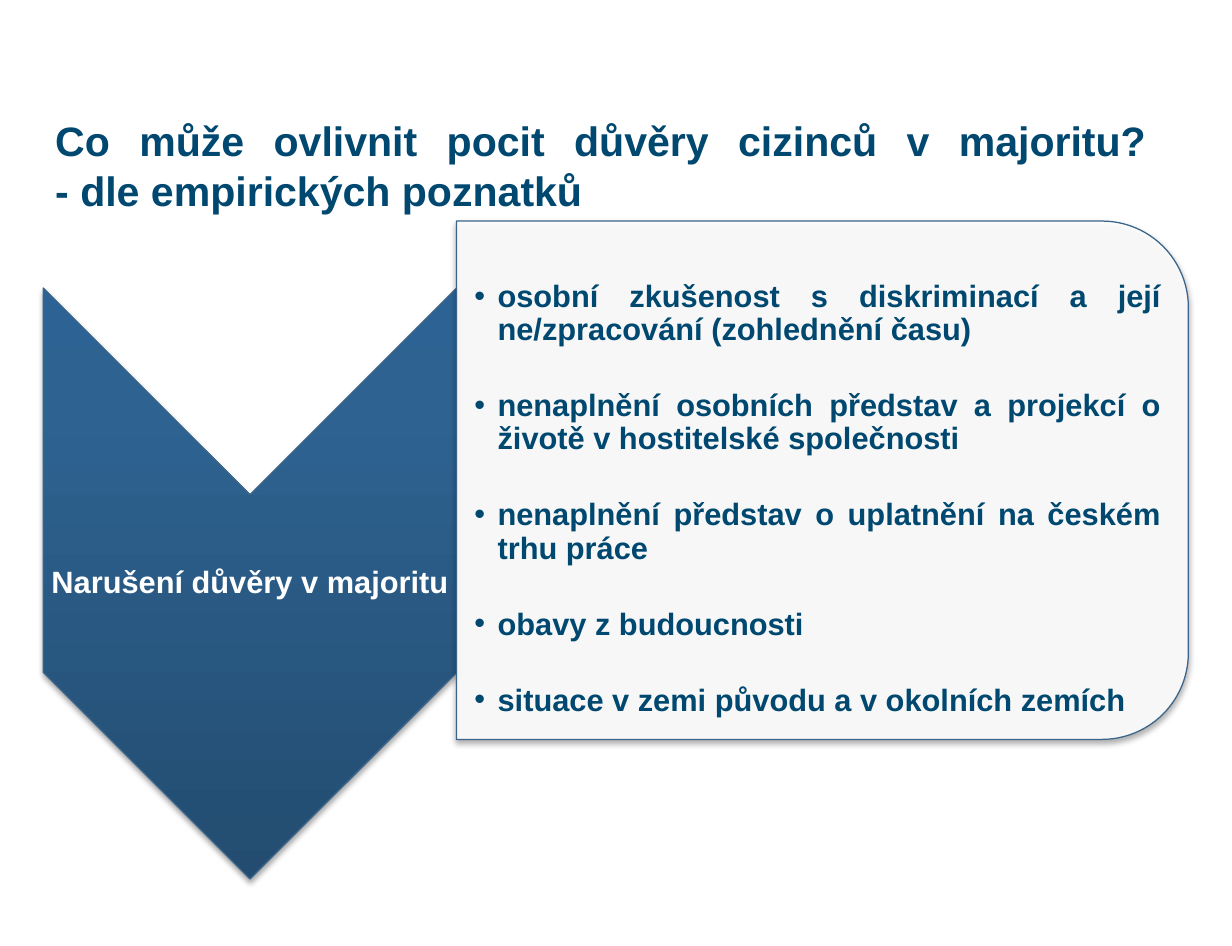
"""Build a slide on what weakens foreigners' trust in the majority society."""
from dataclasses import dataclass

from lxml.etree import SubElement
from pptx import Presentation
from pptx.dml.color import RGBColor
from pptx.enum.shapes import MSO_SHAPE as Geom
from pptx.enum.text import MSO_ANCHOR as Anchor, PP_ALIGN as Align
from pptx.oxml import parse_xml
from pptx.oxml.ns import nsdecls, qn
from pptx.util import Cm, Pt

NAVY, WHITE, EDGE = "004870", "FFFFFF", "3B658A"
STOPS = ((0, "234C70"), (80, "2E6391"), (100, "2C6394"))
ITEMS = (
    "osobní zkušenost s diskriminací a její ne/zpracování (zohlednění času)",
    "nenaplnění osobních představ a projekcí o životě v hostitelské společnosti",
    "nenaplnění představ o uplatnění na českém trhu práce",
    "obavy z budoucnosti",
    "situace v zemi původu a v okolních zemích",
)


@dataclass
class Box:
    left: float
    top: float
    width: float
    height: float

    def sides(self) -> list:
        return [Cm(v) for v in (self.left, self.top, self.width, self.height)]


@dataclass
class Words:
    box: Box
    lines: tuple
    size: int
    color: str
    align: Align
    anchor: Anchor
    inset: tuple
    spacing: float = 1.0
    gap: float = 0
    bullet: bool = False


def paint(target, color: str) -> None:
    target.rgb = RGBColor.from_string(color)


def add_turned(slide, kind: Geom, box: Box):
    shape = slide.shapes.add_shape(kind, *box.sides())
    shape.rotation = 90
    paint(shape.line.color, EDGE)
    shape.line.width = Pt(0.75)
    return shape


def add_shadow(shape) -> None:
    shape._element.spPr.append(parse_xml(
        f'<a:effectLst {nsdecls("a")}><a:outerShdw blurRad="{Pt(3.1)}" '
        f'dist="{Pt(1.8)}" dir="5400000" rotWithShape="0">'
        '<a:srgbClr val="000000"><a:alpha val="35000"/></a:srgbClr>'
        '</a:outerShdw></a:effectLst>'))


def add_shade(shape) -> None:
    stops = "".join(f'<a:gs pos="{at * 1000}"><a:srgbClr val="{color}"/></a:gs>'
                    for at, color in STOPS)
    fill = parse_xml(
        f'<a:gradFill {nsdecls("a")} rotWithShape="0"><a:gsLst>{stops}</a:gsLst>'
        '<a:lin ang="16200000" scaled="0"/></a:gradFill>')
    shape._element.spPr.find(qn("a:prstGeom")).addnext(fill)


def add_veil(shape) -> None:
    shape.fill.solid()
    paint(shape.fill.fore_color, WHITE)
    tint = shape._element.spPr.find(qn("a:solidFill")).find(qn("a:srgbClr"))
    SubElement(tint, qn("a:alpha")).set("val", "90000")


def add_bullet(para) -> None:
    props = para._p.get_or_add_pPr()
    props.set("marL", str(Cm(0.48)))
    props.set("indent", str(Cm(-0.48)))
    SubElement(props, qn("a:buFont")).set("typeface", "Arial")
    SubElement(props, qn("a:buChar")).set("char", "•")


def add_words(slide, words: Words) -> None:
    frame = slide.shapes.add_textbox(*words.box.sides()).text_frame
    frame.word_wrap = True
    frame.vertical_anchor = words.anchor
    (frame.margin_left, frame.margin_top,
     frame.margin_right, frame.margin_bottom) = map(Cm, words.inset)
    for i, line in enumerate(words.lines):
        para = frame.add_paragraph() if i else frame.paragraphs[0]
        para.text = line
        para.alignment = words.align
        para.line_spacing = words.spacing
        if i:
            para.space_before = Pt(words.gap)
        if words.bullet:
            add_bullet(para)
        for run in para.runs:
            run.font.name = "Arial"
            run.font.size = Pt(words.size)
            run.font.bold = True
            paint(run.font.color, words.color)


def main() -> None:
    deck = Presentation()
    deck.slide_width, deck.slide_height = Cm(25.4), Cm(19.51)
    slide = deck.slides.add_slide(deck.slide_layouts[6])

    add_words(slide, Words(
        Box(0.89, 2.72, 23.6, 1.83),
        ("Co může ovlivnit pocit důvěry cizinců v majoritu? \v"
         "- dle empirických poznatků",),
        24, NAVY, Align.JUSTIFY, Anchor.BOTTOM, (0.25, 0.13, 0.25, 0.13)))

    arrow = add_turned(slide, Geom.CHEVRON, Box(-0.94, 7.77, 12.19, 8.53))
    add_shade(arrow)
    add_shadow(arrow)
    add_words(slide, Words(
        Box(0.89, 10.21, 8.53, 3.66), ("Narušení důvěry v majoritu",),
        18, WHITE, Align.CENTER, Anchor.MIDDLE, (0.03,) * 4, 0.9))

    panel = add_turned(slide, Geom.ROUND_2_SAME_RECTANGLE,
                       Box(11.61, 2.36, 10.69, 15.09))
    add_veil(panel)
    add_shadow(panel)
    add_words(slide, Words(
        Box(9.42, 5.08, 14.55, 9.65), ITEMS, 18, NAVY, Align.JUSTIFY,
        Anchor.MIDDLE, (0.36, 0.81, 0.03, 0.03), 0.9, 25, True))

    deck.save("out.pptx")


if __name__ == "__main__":
    main()
